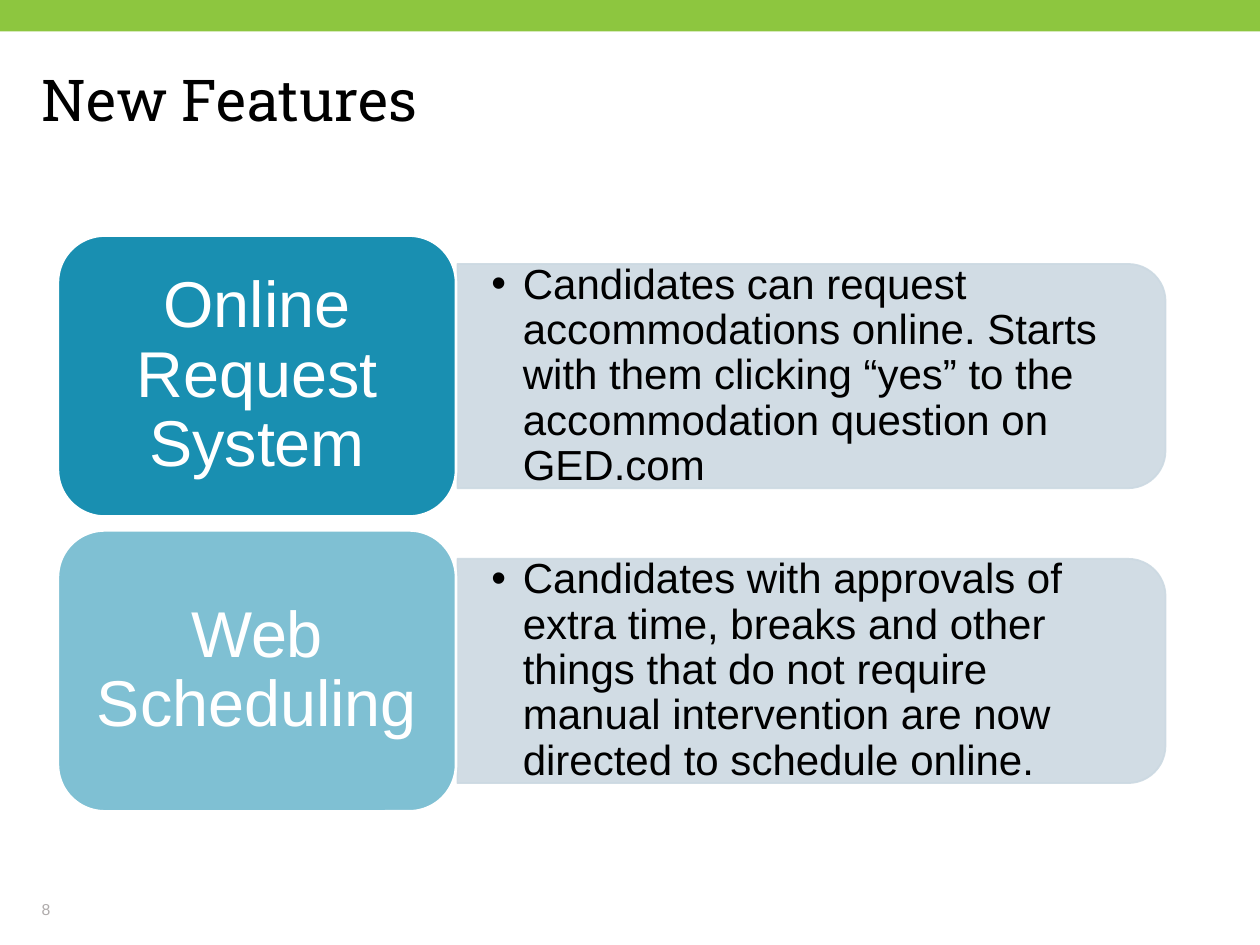
"""Build the New Features slide with its two feature rows."""
from dataclasses import dataclass

import pptx
import pptx.dml.color
import pptx.enum.shapes
import pptx.enum.text
import pptx.oxml.ns
import pptx.util
from lxml import etree

Inches = pptx.util.Inches
Pt = pptx.util.Pt
Shapes = pptx.enum.shapes.MSO_SHAPE
Anchor = pptx.enum.text.MSO_ANCHOR
Align = pptx.enum.text.PP_ALIGN
qn = pptx.oxml.ns.qn

ROW_TOP = 1.87
ROW_STEP = 2.34
LABEL_LEFT, LABEL_WIDTH, LABEL_HEIGHT = 0.46, 3.16, 2.23
PANEL_LEFT, PANEL_WIDTH, PANEL_HEIGHT = 3.63, 5.62, 1.78


@dataclass
class Feature:
    label: str
    detail: str
    opacity: int


FEATURES = [
    Feature(
        "Online Request System",
        "Candidates can request accommodations online. Starts with them clicking "
        "“yes” to the accommodation question on GED.com",
        90,
    ),
    Feature(
        "Web Scheduling",
        "Candidates with approvals of extra time, breaks and other things that do not "
        "require manual intervention are now directed to schedule online.",
        50,
    ),
]


def color(value: str) -> pptx.dml.color.RGBColor:
    return pptx.dml.color.RGBColor.from_string(value)


def set_opacity(fill, percent: int) -> None:
    element = fill._xPr.find(qn("a:solidFill"))[0]
    etree.SubElement(element, qn("a:alpha"), val=str(percent * 1000))


def add_block(slide, kind, left: float, top: float, width: float, height: float,
              fill: str, opacity: int = 100, line: str = "", line_width: float = 1,
              line_opacity: int = 100):
    shape = slide.shapes.add_shape(
        kind, Inches(left), Inches(top), Inches(width), Inches(height))
    shape.shadow.inherit = False
    shape.fill.solid()
    shape.fill.fore_color.rgb = color(fill)
    if opacity < 100:
        set_opacity(shape.fill, opacity)
    if line:
        shape.line.color.rgb = color(line)
        shape.line.width = Pt(line_width)
        if line_opacity < 100:
            set_opacity(shape.line.fill, line_opacity)
    else:
        shape.line.fill.background()
    return shape


def add_text(slide, text: str, left: float, top: float, width: float, height: float,
             size: float, text_color: str, font: str = "Arial", anchor=Anchor.MIDDLE,
             align=Align.LEFT, margins: tuple[float, float] = (0, 0),
             spacing: float = 0.9, bullet: bool = False) -> None:
    box = slide.shapes.add_textbox(
        Inches(left), Inches(top), Inches(width), Inches(height))
    frame = box.text_frame
    frame.word_wrap = True
    frame.vertical_anchor = anchor
    frame.margin_left = frame.margin_right = Inches(margins[0])
    frame.margin_top = frame.margin_bottom = Inches(margins[1])
    paragraph = frame.paragraphs[0]
    paragraph.text = text
    paragraph.alignment = align
    paragraph.line_spacing = spacing
    if bullet:
        properties = paragraph._p.get_or_add_pPr()
        properties.set("marL", str(Inches(0.25)))
        properties.set("indent", str(Inches(-0.25)))
        etree.SubElement(properties, qn("a:buFont"), typeface="Arial")
        etree.SubElement(properties, qn("a:buChar"), char="•")
    paragraph.font.size = Pt(size)
    paragraph.font.name = font
    paragraph.font.color.rgb = color(text_color)


def add_feature(slide, feature: Feature, top: float) -> None:
    middle = top + LABEL_HEIGHT / 2
    panel = add_block(
        slide, Shapes.ROUND_2_SAME_RECTANGLE,
        PANEL_LEFT + (PANEL_WIDTH - PANEL_HEIGHT) / 2, middle - PANEL_WIDTH / 2,
        PANEL_HEIGHT, PANEL_WIDTH, "CCD9E2", 90, "CCD9E2", 1, 90)
    panel.rotation = 90
    add_text(slide, feature.detail, PANEL_LEFT, middle - 0.805, 5.53, 1.61, 24, "000000",
             margins=(0.27, 0.14), bullet=True)
    add_block(slide, Shapes.ROUNDED_RECTANGLE, LABEL_LEFT, top, LABEL_WIDTH, LABEL_HEIGHT,
              "0083A9", feature.opacity, "FFFFFF", 1.5)
    add_text(slide, feature.label, LABEL_LEFT + 0.11, top + 0.11, LABEL_WIDTH - 0.22,
             LABEL_HEIGHT - 0.22, 37, "FFFFFF", align=Align.CENTER, margins=(0.15, 0.08))


def main() -> None:
    presentation = pptx.Presentation()
    presentation.slide_width = Inches(10)
    presentation.slide_height = Inches(7.5)
    slide = presentation.slides.add_slide(presentation.slide_layouts[6])
    add_block(slide, Shapes.RECTANGLE, 0, 0, 10, 0.25, "8DC63F")
    add_text(slide, "New Features", 0.33, 0.57, 9.31, 0.89, 33, "000000",
             font="Roboto Slab", anchor=Anchor.TOP)
    add_text(slide, "8", 0.33, 7.05, 2.25, 0.24, 9, "AFABAB",
             anchor=Anchor.BOTTOM, spacing=1.0)
    for index, feature in enumerate(FEATURES):
        add_feature(slide, feature, ROW_TOP + index * ROW_STEP)
    presentation.save("out.pptx")


if __name__ == "__main__":
    main()
